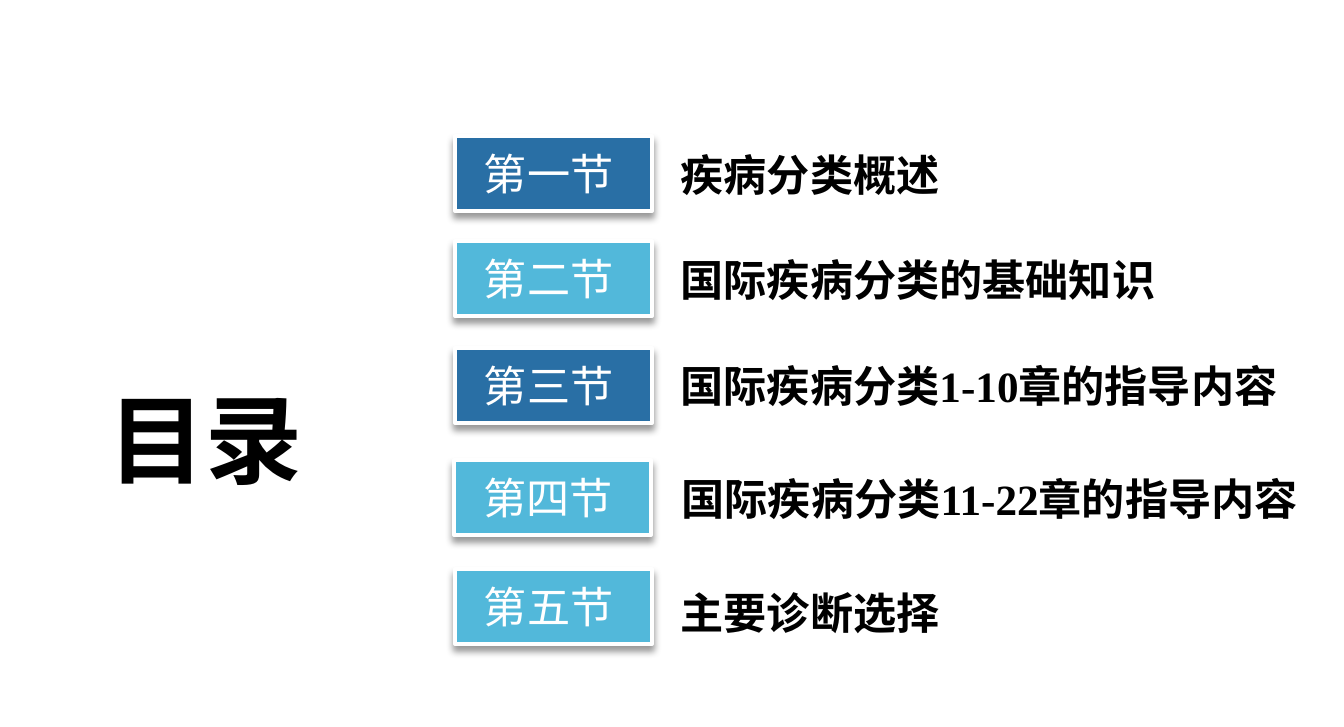
from dataclasses import dataclass

from lxml import etree
from pptx import Presentation
from pptx.dml.color import RGBColor
from pptx.enum.shapes import MSO_SHAPE
from pptx.enum.text import MSO_ANCHOR, MSO_AUTO_SIZE, PP_ALIGN
from pptx.oxml.ns import qn
from pptx.util import Pt

RECTANGLE = MSO_SHAPE.RECTANGLE
TOP, MIDDLE = MSO_ANCHOR.TOP, MSO_ANCHOR.MIDDLE
GROW, FIXED = MSO_AUTO_SIZE.SHAPE_TO_FIT_TEXT, MSO_AUTO_SIZE.NONE
LEFT, CENTER = PP_ALIGN.LEFT, PP_ALIGN.CENTER
EMU_PER_PX = 914400 / 129.4
TITLE_ONLY = 5


@dataclass(frozen=True)
class Theme:
    text: str = "000000"
    label_text: str = "FFFFFF"
    border: str = "FFFFFF"
    shadow: str = "000000"
    dark_blue: str = "296FA5"
    light_blue: str = "52B8DA"
    title_size: int = 54
    section_size: int = 24
    border_width: float = 2.25
    title_font: str = "Noto Sans CJK SC"
    section_font: str = "Times New Roman"


def px(*lengths):
    return [round(length * EMU_PER_PX) for length in lengths]


def apply(target, formats):
    for name, value in formats.items():
        setattr(target, name, value)


class ContentsSlide:
    def __init__(self, presentation, theme):
        self.theme = theme
        layout = presentation.slide_layouts[TITLE_ONLY]
        self.slide = presentation.slides.add_slide(layout)

    def set_text(self, shape, text, frame_formats, alignment, font_formats, color):
        frame = shape.text_frame
        frame.text = text
        apply(frame, frame_formats)
        paragraph = frame.paragraphs[0]
        paragraph.alignment = alignment
        font = paragraph.runs[0].font
        apply(font, font_formats)
        font.color.rgb = RGBColor.from_string(color)

    def section_font(self, bold):
        return {"name": self.theme.section_font,
                "size": Pt(self.theme.section_size), "bold": bold}

    def title(self, text, left, top, width, height):
        title = self.slide.shapes.title
        bounds = zip(("left", "top", "width", "height"),
                     px(left, top, width, height))
        apply(title, dict(bounds))
        self.set_text(title, text,
                      {"word_wrap": False, "auto_size": GROW,
                       "vertical_anchor": TOP},
                      LEFT,
                      {"name": self.theme.title_font,
                       "size": Pt(self.theme.title_size), "bold": True},
                      self.theme.text)
        properties = title.text_frame.paragraphs[0].runs[0]._r.rPr
        east_asian = etree.Element(qn("a:ea"), typeface=self.theme.title_font)
        properties.find(qn("a:latin")).addnext(east_asian)

    def label(self, text, fill, left, top, width, height):
        label = self.slide.shapes.add_shape(
            RECTANGLE, *px(left, top, width, height))
        label.fill.solid()
        label.fill.fore_color.rgb = RGBColor.from_string(fill)
        label.line.color.rgb = RGBColor.from_string(self.theme.border)
        label.line.width = Pt(self.theme.border_width)
        self.add_shadow(label)
        self.set_text(label, text,
                      {"word_wrap": True, "auto_size": FIXED,
                       "vertical_anchor": MIDDLE},
                      CENTER, self.section_font(False), self.theme.label_text)

    def add_shadow(self, shape):
        shape.shadow.inherit = False
        effects = shape._element.spPr.find(qn("a:effectLst"))
        shadow = etree.SubElement(
            effects, qn("a:outerShdw"), blurRad=str(int(Pt(4))),
            dist=str(int(Pt(3))), dir="5400000", rotWithShape="0")
        color = etree.SubElement(shadow, qn("a:srgbClr"),
                                 val=self.theme.shadow)
        etree.SubElement(color, qn("a:alpha"), val="40000")

    def caption(self, text, left, top, width, height):
        caption = self.slide.shapes.add_textbox(*px(left, top, width, height))
        self.set_text(caption, text,
                      {"word_wrap": True, "auto_size": GROW,
                       "vertical_anchor": TOP},
                      LEFT, self.section_font(True), self.theme.text)


def main():
    theme = Theme()
    presentation = Presentation()
    presentation.slide_width, presentation.slide_height = px(1344, 727)
    contents = ContentsSlide(presentation, theme)
    contents.title("目录", 96, 373, 232, 131)

    dark, light = theme.dark_blue, theme.light_blue
    sections = [
        ("第一节 ", dark, 455, 136, "疾病分类概述", 668, 142, 427),
        ("第二节 ", light, 455, 241, "国际疾病分类的基础知识", 668, 247, 506),
        ("第三节 ", dark, 455, 348, "国际疾病分类1-10章的指导内容", 668, 353, 646),
        ("第四节 ", light, 454, 460, "国际疾病分类11-22章的指导内容", 669, 466, 675),
        ("第五节 ", light, 455, 569, "主要诊断选择", 668, 580, 427),
    ]
    for (number, fill, label_left, label_top,
         topic, topic_left, topic_top, topic_width) in sections:
        contents.label(number, fill, label_left, label_top, 197, 75)
        contents.caption(topic, topic_left, topic_top, topic_width, 65)

    presentation.save("out.pptx")


if __name__ == "__main__":
    main()
